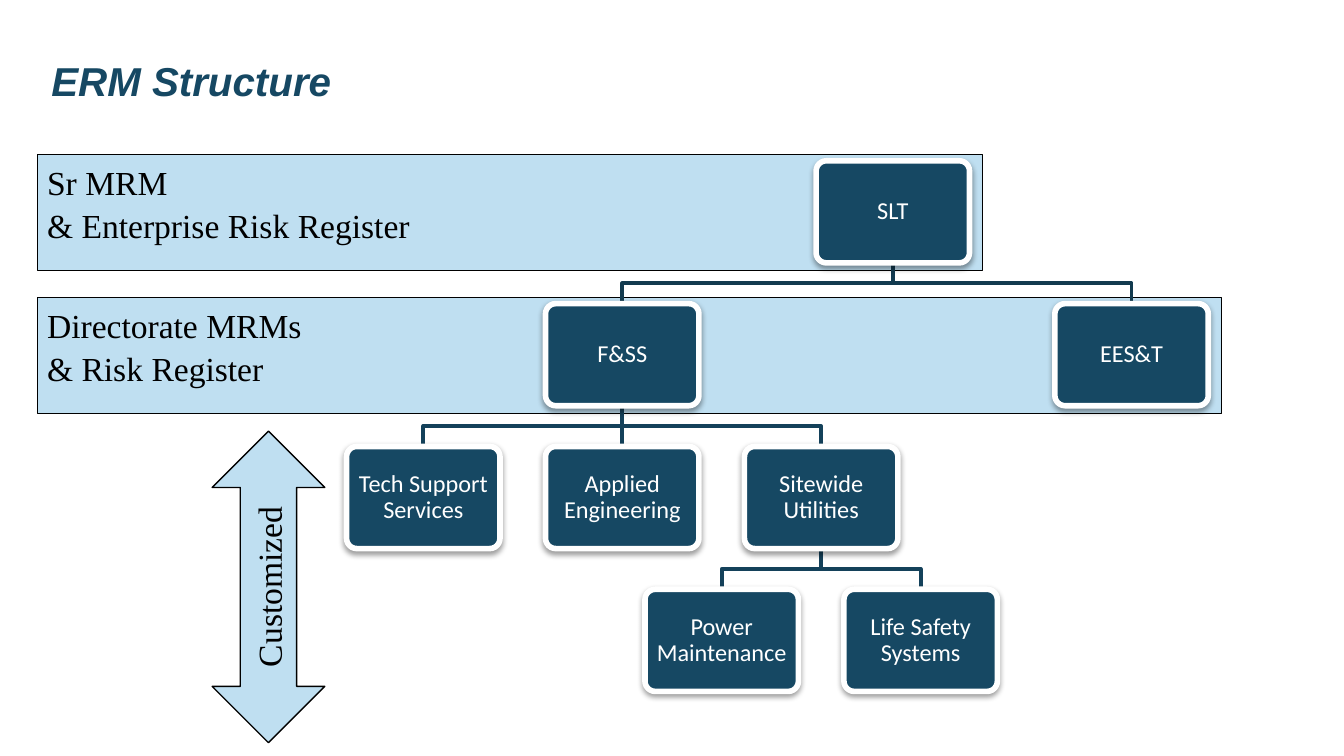
from lxml.etree import SubElement
from pptx import Presentation
from pptx.dml.color import RGBColor
from pptx.enum.shapes import MSO_SHAPE as Preset
from pptx.enum.text import MSO_ANCHOR as Anchor, PP_ALIGN as Align
from pptx.oxml.ns import qn
from pptx.util import Cm, Pt

NAVY = RGBColor(0x16, 0x48, 0x63)
UPPER_LINK = RGBColor(0x12, 0x3A, 0x4F)
LOWER_LINK = RGBColor(0x14, 0x41, 0x5A)
PALE_BLUE = RGBColor(0xBF, 0xDF, 0xF1)
WHITE = RGBColor(0xFF, 0xFF, 0xFF)
BLACK = RGBColor(0, 0, 0)

TITLE = "ERM Structure"
# Lines of text, width in cm
BANDS = [
    (["Sr MRM", "& Enterprise Risk Register"], 17.86),
    (["Directorate MRMs", "& Risk Register"], 22.38),
]
# Unit: (parent, column, level)
UNITS = {
    "SLT": (None, 2.36, 0),
    "F&SS": ("SLT", 1, 1),
    "EES&T": ("SLT", 3.56, 1),
    "Tech Support Services": ("F&SS", 0, 2),
    "Applied Engineering": ("F&SS", 1, 2),
    "Sitewide Utilities": ("F&SS", 2, 2),
    "Power Maintenance": ("Sitewide Utilities", 1.5, 3),
    "Life Safety Systems": ("Sitewide Utilities", 2.5, 3),
}
ARROW_LABEL = "Customized"

FIRST_CENTRE, COLUMN_PITCH = 8.0, 3.76
FIRST_TOP, LEVEL_PITCH = 3.04, 2.7
UNIT_WIDTH, UNIT_HEIGHT = 2.9, 1.93
BAND_LEFT, BAND_TOP, BAND_HEIGHT = 0.71, 2.92, 2.2


def unit_position(unit):
    """Return the horizontal centre and the top of a unit, in cm."""
    _, column, level = UNITS[unit]
    return FIRST_CENTRE + column * COLUMN_PITCH, FIRST_TOP + level * LEVEL_PITCH


def add_filled(slide, preset, box, fill, line, line_width):
    shape = slide.shapes.add_shape(preset, *map(Cm, box))
    shape.shadow.inherit = False
    shape.fill.solid()
    shape.fill.fore_color.rgb = fill
    shape.line.color.rgb = line
    shape.line.width = Pt(line_width)
    return shape


def write(frame, lines, size, font, color, align, spacing=1.0):
    for index, line in enumerate(lines):
        paragraph = frame.paragraphs[0] if index == 0 else frame.add_paragraph()
        paragraph.alignment = align
        paragraph.line_spacing = spacing
        run = paragraph.add_run()
        run.text = line
        run.font.size = Pt(size)
        run.font.name = font
        run.font.color.rgb = color


def set_insets(frame, side, vertical):
    frame.margin_left = frame.margin_right = Cm(side)
    frame.margin_top = frame.margin_bottom = Cm(vertical)


def add_soft_shadow(shape):
    effects = shape._element.spPr.find(qn("a:effectLst"))
    shadow = SubElement(effects, qn("a:outerShdw"), blurRad=str(Pt(3.1)),
                        dist=str(Pt(1.6)), dir="5400000", rotWithShape="0")
    black = SubElement(shadow, qn("a:srgbClr"), val=str(BLACK))
    SubElement(black, qn("a:alpha"), val="38000")


def add_title(slide):
    title = slide.shapes.title
    title.left, title.top, title.width, title.height = map(Cm, (0.97, 1.22, 23.5, 0.76))
    frame = title.text_frame
    set_insets(frame, 0, 0.13)
    frame.vertical_anchor = Anchor.MIDDLE
    write(frame, [TITLE], 21.6, "Arial", NAVY, Align.LEFT, 0.85)
    font = frame.paragraphs[0].runs[0].font
    font.bold = font.italic = True


def add_band(slide, index, lines, width):
    box = (BAND_LEFT, BAND_TOP + index * LEVEL_PITCH, width, BAND_HEIGHT)
    band = add_filled(slide, Preset.RECTANGLE, box, PALE_BLUE, BLACK, 0.75)
    set_insets(band.text_frame, 0.18, 0.1)
    band.text_frame.vertical_anchor = Anchor.TOP
    write(band.text_frame, lines, 18, "Times New Roman", BLACK, Align.LEFT, 1.06)


def add_link(slide, parent, child):
    start_x, parent_top = unit_position(parent)
    end_x, end_y = unit_position(child)
    start_y = parent_top + UNIT_HEIGHT
    middle_y = (start_y + end_y) / 2
    route = [(start_x, middle_y), (end_x, middle_y), (end_x, end_y)]
    builder = slide.shapes.build_freeform(Cm(start_x), Cm(start_y))
    builder.add_line_segments([(Cm(x), Cm(y)) for x, y in route], close=False)
    link = builder.convert_to_shape()
    link.shadow.inherit = False
    link.fill.background()
    link.line.color.rgb = UPPER_LINK if UNITS[child][2] == 1 else LOWER_LINK
    link.line.width = Pt(2)


def add_unit(slide, unit):
    centre, top = unit_position(unit)
    box = (centre - UNIT_WIDTH / 2, top, UNIT_WIDTH, UNIT_HEIGHT)
    shape = add_filled(slide, Preset.ROUNDED_RECTANGLE, box, NAVY, WHITE, 3)
    shape.adjustments[0] = 0.1
    add_soft_shadow(shape)
    frame = shape.text_frame
    set_insets(frame, 0.13, 0.13)
    frame.word_wrap = True
    frame.vertical_anchor = Anchor.MIDDLE
    write(frame, [unit], 13, "Calibri", WHITE, Align.CENTER, 0.9)


def add_arrow(slide):
    arrow = add_filled(slide, Preset.UP_DOWN_ARROW, (4.01, 8.15, 2.13, 5.89),
                       PALE_BLUE, BLACK, 0.75)
    frame = arrow.text_frame
    set_insets(frame, 0.18, 0.1)
    frame.vertical_anchor = Anchor.MIDDLE
    frame._txBody.bodyPr.set("vert", "vert270")
    write(frame, [ARROW_LABEL], 18, "Times New Roman", BLACK, Align.CENTER)


def main():
    deck = Presentation()
    deck.slide_width, deck.slide_height = Cm(25.4), Cm(14.29)
    slide = deck.slides.add_slide(deck.slide_layouts[5])
    add_title(slide)
    for index, (lines, width) in enumerate(BANDS):
        add_band(slide, index, lines, width)
    for unit, (parent, _, _) in UNITS.items():
        if parent:
            add_link(slide, parent, unit)
    for unit in UNITS:
        add_unit(slide, unit)
    add_arrow(slide)
    deck.save("out.pptx")


if __name__ == "__main__":
    main()
